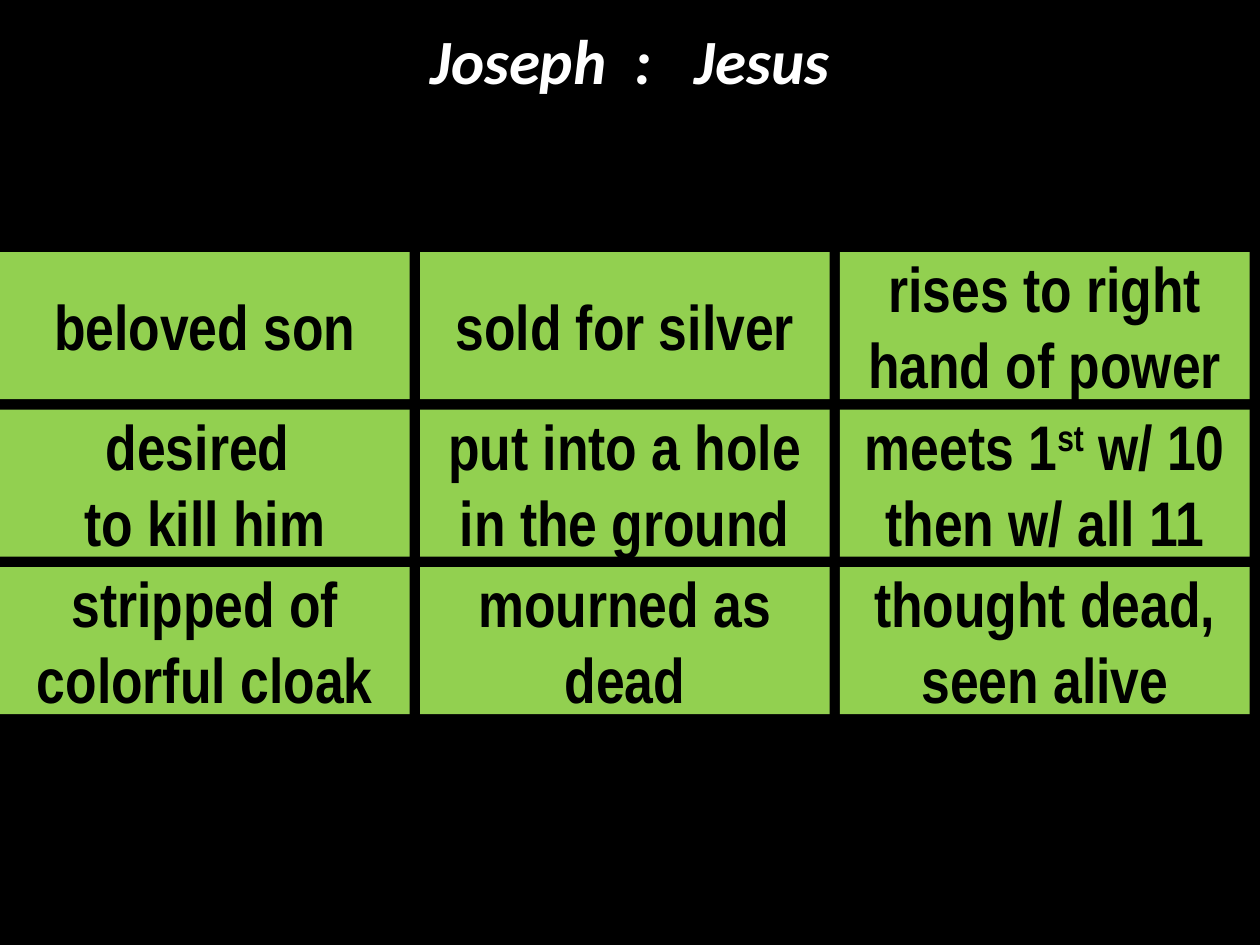
from dataclasses import dataclass

from pptx import Presentation
from pptx.dml.color import RGBColor
from pptx.enum.shapes import MSO_SHAPE
from pptx.enum.text import MSO_ANCHOR, PP_ALIGN
from pptx.util import Cm, Pt

RECT = MSO_SHAPE.RECTANGLE
TOP, MIDDLE = MSO_ANCHOR.TOP, MSO_ANCHOR.MIDDLE
CENTER = PP_ALIGN.CENTER


@dataclass(frozen=True)
class Theme:
    """Colours, fonts and type size of the slide."""
    black: RGBColor = RGBColor(0x00, 0x00, 0x00)
    white: RGBColor = RGBColor(0xFF, 0xFF, 0xFF)
    green: RGBColor = RGBColor(0x92, 0xD0, 0x50)
    title_font: str = "Calibri"
    card_font: str = "Arial Narrow"
    size: Pt = Pt(36)
    superscript: str = "30000"


class Deck:
    """Draws styled elements on the current slide."""

    def __init__(self, s, theme):
        self.s, self.theme = s, theme

    def box(self, x, y, w, h, fill, anchor):
        """Add a plain filled rectangle and return its text frame."""
        sp = self.s.shapes.add_shape(RECT, Cm(x), Cm(y), Cm(w), Cm(h))
        sp.shadow.inherit = False
        sp.fill.solid()
        sp.fill.fore_color.rgb = fill
        sp.line.fill.background()
        tf = sp.text_frame
        tf.word_wrap = True
        tf.vertical_anchor = anchor
        return tf

    def style(self, p, font, color, italic=False):
        """Centre a paragraph and set its bold font."""
        p.alignment = CENTER
        p.font.name, p.font.size = font, self.theme.size
        p.font.bold, p.font.italic = True, italic
        p.font.color.rgb = color

    def title(self, text, w, h):
        """Add the full-slide black panel with the title at its top."""
        t = self.theme
        tf = self.box(0, 0, w, h, t.black, TOP)
        tf.margin_top = Cm(0.44)
        p = tf.paragraphs[0]
        p.add_run().text = text
        self.style(p, t.title_font, t.white, italic=True)

    def card(self, text, x, y, w, h):
        """Add a green card; text between carets is superscript."""
        t = self.theme
        tf = self.box(x, y, w, h, t.green, MIDDLE)
        for i, line in enumerate(text.split("\n")):
            p = tf.add_paragraph() if i else tf.paragraphs[0]
            for j, part in enumerate(line.split("^")):
                r = p.add_run()
                r.text = part
                if j % 2:
                    r._r.get_or_add_rPr().set("baseline", t.superscript)
            self.style(p, t.card_font, t.black)


def main():
    """Build and save the slide."""
    width, height = 25.4, 19.05
    rows = [
        ["beloved son", "sold for silver", "rises to right hand of power"],
        ["desired \nto kill him", "put into a hole in the ground",
         "meets 1^st^ w/ 10 then w/ all 11"],
        ["stripped of colorful cloak", "mourned as dead",
         "thought dead, seen alive"],
    ]
    grid_top, gap = 5.08, 0.21
    col_step, row_step = width / 3, height / 6

    prs = Presentation()
    prs.slide_width, prs.slide_height = Cm(width), Cm(height)
    deck = Deck(prs.slides.add_slide(prs.slide_layouts[6]), Theme())
    deck.title("Joseph  :   Jesus", width, height)
    for i, row in enumerate(rows):
        for j, text in enumerate(row):
            deck.card(text, j * col_step, grid_top + i * row_step,
                      col_step - gap, row_step - gap)
    prs.save("out.pptx")


if __name__ == "__main__":
    main()
